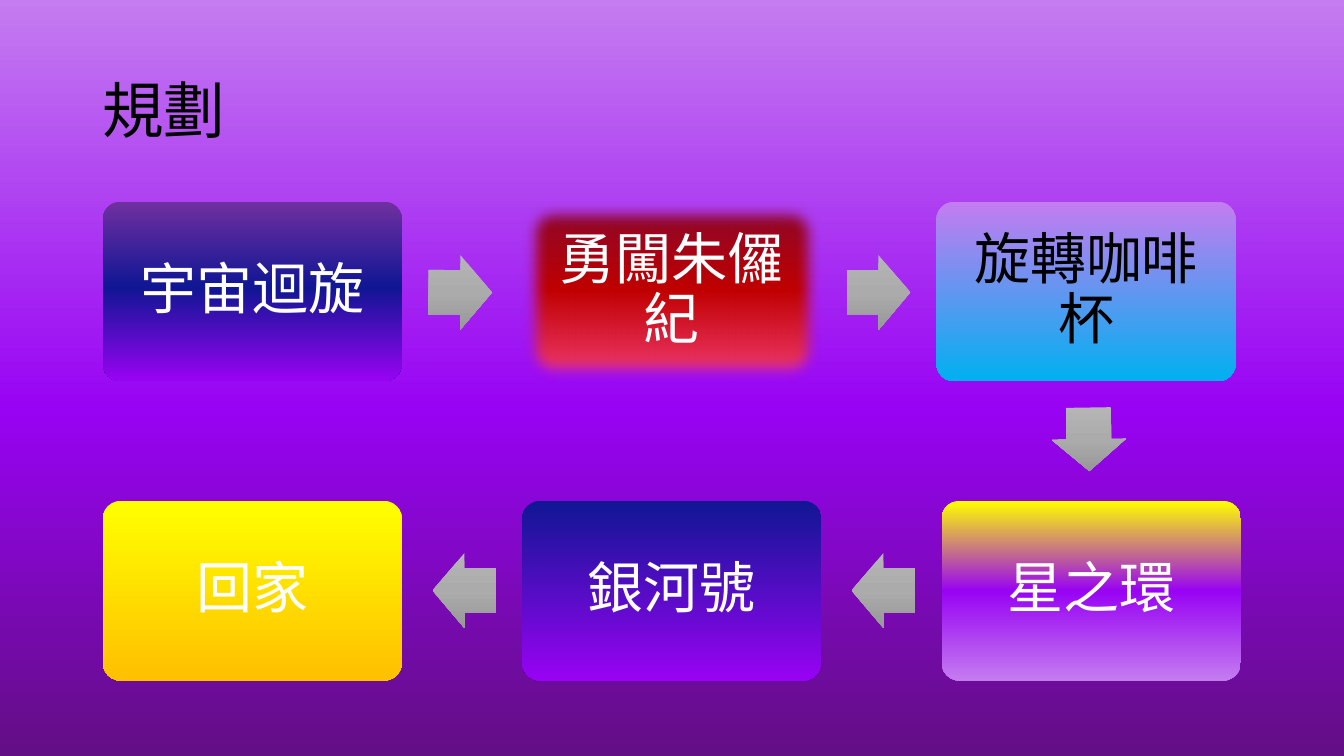
from lxml.etree import SubElement
from pptx import Presentation
from pptx.dml.color import RGBColor
from pptx.enum.shapes import MSO_SHAPE
from pptx.enum.text import MSO_ANCHOR, PP_ALIGN
from pptx.oxml.ns import qn
from pptx.util import Cm, Pt

BLACK = RGBColor(0x00, 0x00, 0x00)
WHITE = RGBColor(0xFF, 0xFF, 0xFF)
LILAC = RGBColor(0xC4, 0x7C, 0xF0)
VIOLET = RGBColor(0x98, 0x03, 0xF3)
PLUM = RGBColor(0x62, 0x0E, 0x84)
PURPLE = RGBColor(0x70, 0x30, 0xA0)
NAVY = RGBColor(0x10, 0x16, 0x94)
WINE = RGBColor(0x86, 0x08, 0x2F)
RED = RGBColor(0xC0, 0x00, 0x00)
PINK = RGBColor(0xF4, 0x3E, 0x76)
SKY = RGBColor(0x00, 0xB0, 0xF0)
YELLOW = RGBColor(0xFF, 0xFF, 0x00)
AMBER = RGBColor(0xFF, 0xC0, 0x00)
LIGHT_GREY = RGBColor(0xB5, 0xB5, 0xB5)
MID_GREY = RGBColor(0xAB, 0xAB, 0xAB)
DARK_GREY = RGBColor(0x98, 0x98, 0x98)

ARROW_STOPS = [(0, LIGHT_GREY), (50, MID_GREY), (100, DARK_GREY)]

# Grid of steps, in centimetres
LEFT, COLUMN_PITCH = 2.59, 10.57
TOP, ROW_PITCH = 5.08, 7.54
STEP_WIDTH, STEP_HEIGHT = 7.54, 4.53

# Column, row, text, text colour, gradient stops
STEPS = [
    (0, 0, "宇宙迴旋", WHITE, [(0, PURPLE), (48, NAVY), (100, VIOLET)]),
    (1, 0, "勇闖朱儸紀", WHITE, [(0, WINE), (49, RED), (100, PINK)]),
    (2, 0, "旋轉咖啡杯", BLACK, [(0, LILAC), (100, SKY)]),
    (2, 1, "星之環", WHITE, [(0, YELLOW), (50, VIOLET), (100, LILAC)]),
    (1, 1, "銀河號", WHITE, [(0, NAVY), (100, VIOLET)]),
    (0, 1, "回家", WHITE, [(0, YELLOW), (100, AMBER)]),
]

# Left, top, rotation
ARROWS = [
    (10.8, 6.43, 0.2),
    (21.34, 6.43, 359.8),
    (26.64, 10.13, 89.1),
    (21.46, 13.94, 180),
    (10.9, 13.94, 180),
]


def set_gradient(fill, element, stops):
    """Fill from top to bottom with any number of colour stops."""
    fill.gradient()
    fill.gradient_angle = 270
    stop_list = element.xpath(".//a:gsLst")[0]
    stop_list.getparent().set("rotWithShape", "0")
    for old_stop in list(stop_list):
        stop_list.remove(old_stop)
    for position, color in stops:
        stop = SubElement(stop_list, qn("a:gs"), pos=str(position * 1000))
        SubElement(stop, qn("a:srgbClr"), val=str(color))


def write_text(shape, text, size, font, color, alignment):
    frame = shape.text_frame
    frame.word_wrap = True
    frame.vertical_anchor = MSO_ANCHOR.MIDDLE
    paragraph = frame.paragraphs[0]
    paragraph.text = text
    paragraph.alignment = alignment
    paragraph.line_spacing = 0.9
    paragraph.font.size = Pt(size)
    paragraph.font.name = font
    paragraph.font.color.rgb = color


def add_gradient_shape(slide, kind, left, top, width, height, stops):
    shape = slide.shapes.add_shape(kind, Cm(left), Cm(top), Cm(width), Cm(height))
    shape.shadow.inherit = False
    shape.line.fill.background()
    set_gradient(shape.fill, shape.element, stops)
    return shape


def add_step(slide, column, row, text, color, stops):
    shape = add_gradient_shape(
        slide, MSO_SHAPE.ROUNDED_RECTANGLE,
        LEFT + column * COLUMN_PITCH, TOP + row * ROW_PITCH,
        STEP_WIDTH, STEP_HEIGHT, stops)
    shape.adjustments[0] = 0.1
    frame = shape.text_frame
    frame.margin_left = frame.margin_right = Cm(0.43)
    frame.margin_top = frame.margin_bottom = Cm(0.43)
    write_text(shape, text, 40, "Calibri", color, PP_ALIGN.CENTER)
    return shape


def soften_edges(shape, radius):
    effects = shape.element.spPr.find(qn("a:effectLst"))
    SubElement(effects, qn("a:softEdge"), rad=str(radius))


def add_arrow(slide, left, top, rotation):
    arrow = add_gradient_shape(
        slide, MSO_SHAPE.RIGHT_ARROW, left, top, 1.6, 1.88, ARROW_STOPS)
    arrow.adjustments[0] = 0.6
    arrow.adjustments[1] = 0.5
    arrow.rotation = rotation


def main():
    presentation = Presentation()
    presentation.slide_width = Cm(33.87)
    presentation.slide_height = Cm(19.05)
    slide = presentation.slides.add_slide(presentation.slide_layouts[6])

    # Background
    set_gradient(slide.background.fill, slide.element,
                 [(0, LILAC), (54, VIOLET), (100, PLUM)])

    # Title
    title = slide.shapes.add_textbox(Cm(2.33), Cm(1.01), Cm(29.21), Cm(3.68))
    write_text(title, "規劃", 44, "Noto Sans CJK SC", BLACK, PP_ALIGN.LEFT)

    # Steps, the second with soft edges and the third slightly to the left
    steps = [add_step(slide, *step) for step in STEPS]
    soften_edges(steps[1], Cm(0.35))
    steps[2].left = Cm(23.6)

    # Arrows between the steps
    for arrow in ARROWS:
        add_arrow(slide, *arrow)

    presentation.save("out.pptx")


if __name__ == "__main__":
    main()
